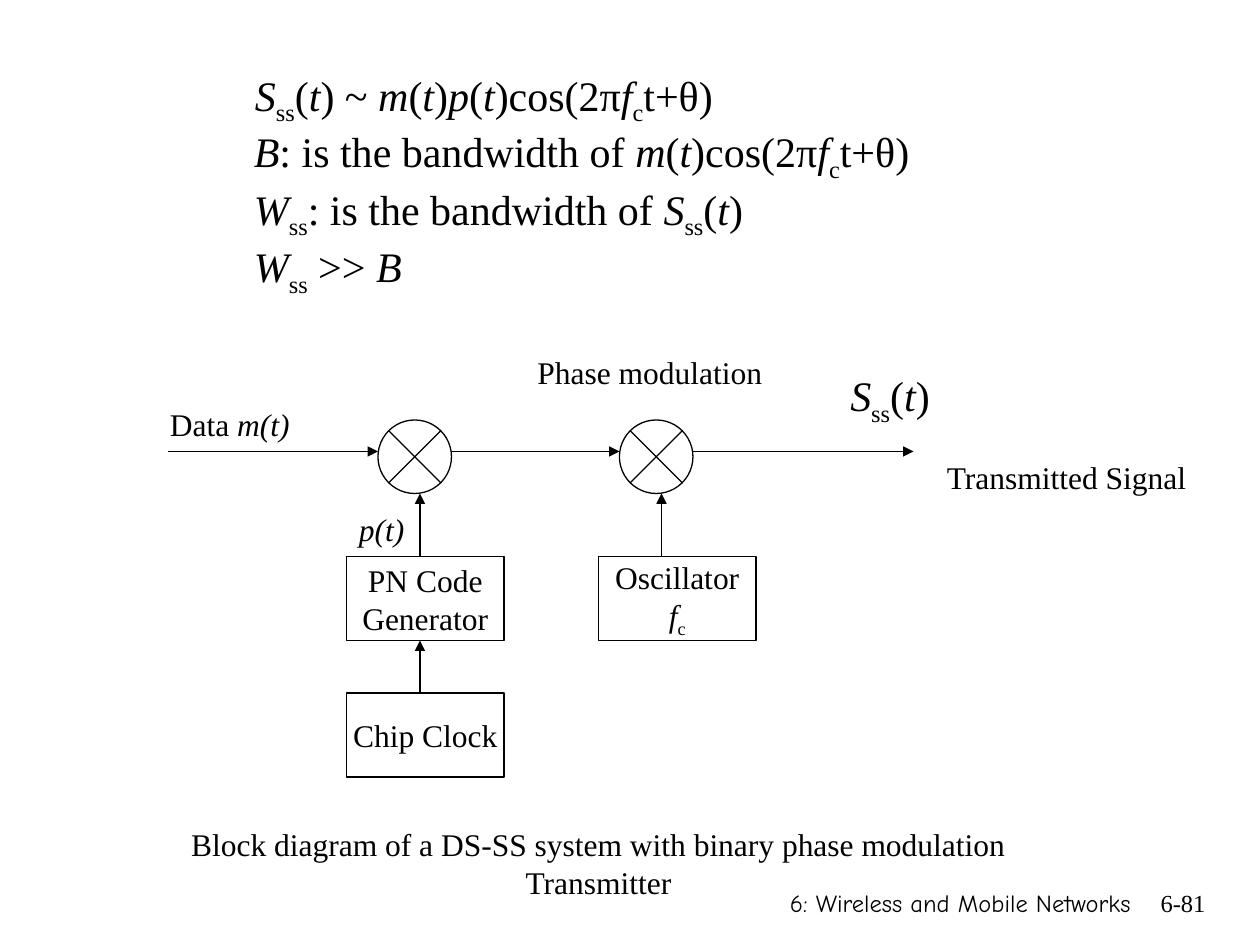
from dataclasses import dataclass

from lxml import etree
from pptx import Presentation
from pptx.dml.color import RGBColor
from pptx.enum.shapes import MSO_CONNECTOR, MSO_SHAPE
from pptx.enum.text import MSO_ANCHOR, MSO_AUTO_SIZE, PP_ALIGN
from pptx.oxml.ns import qn
from pptx.util import Emu, Pt

LEFT, MID, RIGHT = PP_ALIGN.LEFT, PP_ALIGN.CENTER, PP_ALIGN.RIGHT
OVAL, RECT = MSO_SHAPE.OVAL, MSO_SHAPE.RECTANGLE
LINE, CENTRE = MSO_CONNECTOR.STRAIGHT, MSO_ANCHOR.MIDDLE
FIT, FIXED = MSO_AUTO_SIZE.SHAPE_TO_FIT_TEXT, MSO_AUTO_SIZE.NONE


@dataclass(frozen=True)
class Theme:
    ink: RGBColor = RGBColor(0, 0, 0)
    paper: RGBColor = RGBColor(255, 255, 255)
    serif: str = "Times New Roman"
    hand: str = "Comic Neue"
    large: int = 24
    text: int = 18
    small: int = 14
    rule: float = 0.75


THEME = Theme()
SIGNAL = "/S/_ss_(/t/)"
CARRIER = ")cos(2π/f/_c_t+θ)"


def px(n):
    """120 px to the inch."""
    return Emu(n * 7620)


def write(frame, lines, size, align=LEFT, font=THEME.serif):
    """Fill a frame; /x/ marks italics and _x_ a subscript."""
    for n, line in enumerate(lines):
        para = frame.add_paragraph() if n else frame.paragraphs[0]
        para.alignment = align
        para.font.name = font
        para.font.size = Pt(size)
        para.font.color.rgb = THEME.ink
        for i, part in enumerate(line.split("/")):
            for j, piece in enumerate(part.split("_")):
                if not piece:
                    continue
                run = para.add_run()
                run.text = piece
                run.font.name = font
                run.font.size = Pt(size)
                run.font.color.rgb = THEME.ink
                if i % 2:
                    run.font.italic = True
                if j % 2:
                    run.font._element.set("baseline", "-25000")


def label(slide, box, lines, size=THEME.text, align=LEFT,
          font=THEME.serif, wrap=False, fit=FIT):
    frame = slide.shapes.add_textbox(*map(px, box)).text_frame
    frame.word_wrap = wrap
    frame.auto_size = fit
    write(frame, lines, size, align, font)


def outline(slide, kind, box):
    shape = slide.shapes.add_shape(kind, *map(px, box))
    shape.shadow.inherit = False
    shape.fill.solid()
    shape.fill.fore_color.rgb = THEME.paper
    shape.line.color.rgb = THEME.ink
    shape.line.width = Pt(THEME.rule)
    return shape


def stroke(slide, x1, y1, x2, y2, arrow=False):
    line = slide.shapes.add_connector(LINE, *map(px, (x1, y1, x2, y2)))
    line.line.color.rgb = THEME.ink
    line.line.width = Pt(THEME.rule)
    if arrow:
        etree.SubElement(line.line._get_or_add_ln(), qn("a:tailEnd"),
                         type="triangle")
    etree.SubElement(line._element.spPr, qn("a:effectLst"))


def mixer(slide, x, y, size=70):
    """Circle with a cross: multiplies two signals."""
    outline(slide, OVAL, (x, y, size, size))
    near, far = 10, size - 10
    stroke(slide, x + far, y + near, x + near, y + far)
    stroke(slide, x + far, y + far, x + near, y + near)


def block(slide, x, y, lines):
    frame = outline(slide, RECT, (x, y, 150, 80)).text_frame
    frame.word_wrap = False
    frame.vertical_anchor = CENTRE
    write(frame, lines, THEME.text, MID)


def formulas(slide, x, y):
    label(slide, (x + 1, y, 468, 60),
          [SIGNAL + " ~ /m/(/t/)/p/(/t/" + CARRIER], THEME.large)
    label(slide, (x, y + 54, 653, 156),
          ["/B/: is the bandwidth of /m/(/t/" + CARRIER,
           "/W/_ss_: is the bandwidth of " + SIGNAL,
           "/W/_ss_ >> /B/"], THEME.large)


def diagram(slide, x, y):
    for left in (210, 440):
        mixer(slide, x + left, y + 70)
    for left, top, lines in ((180, 330, ["Chip Clock"]),
                             (180, 200, ["PN Code", "Generator"]),
                             (420, 200, ["Oscillator", "/f/_c_"])):
        block(slide, x + left, y + top, lines)

    for start, end in ((10, 210), (280, 440), (510, 720)):
        stroke(slide, x + start, y + 100, x + end, y + 100, True)
    for left, start, end in ((250, 330, 280), (250, 200, 140),
                             (480, 200, 140)):
        stroke(slide, x + left, y + start, x + left, y + end, True)

    label(slide, (x + 648, y + 16, 103, 60), [SIGNAL], THEME.large)
    for left, top, wide, text in ((740, 100, 253, "Transmitted Signal"),
                                  (0, 50, 138, "Data /m(t)/"),
                                  (350, 0, 239, "Phase modulation")):
        label(slide, (x + left, y + top, wide, 48), [text])
    label(slide, (x + 180, y + 150, 85, 48), ["/p(t)/"], wrap=True)


def caption(slide, x, y):
    label(slide, (x, y, 800, 84),
          ["Block diagram of a DS-SS system with binary phase modulation",
           "Transmitter"], align=MID)


def footer(slide, x, y):
    for left, wide, text, font in (
            (0, 506, "6: Wireless and Mobile Networks", THEME.hand),
            (488, 89, "6-81", THEME.serif)):
        label(slide, (x + left, y, wide, 60), [text], THEME.small,
              RIGHT, font, True, FIXED)


def main():
    deck = Presentation()
    deck.slide_width, deck.slide_height = px(1200), px(900)
    slide = deck.slides.add_slide(deck.slide_layouts[6])
    footer(slide, 583, 840)
    formulas(slide, 230, 60)
    diagram(slide, 150, 330)
    caption(slide, 170, 780)
    deck.save("out.pptx")


if __name__ == "__main__":
    main()
